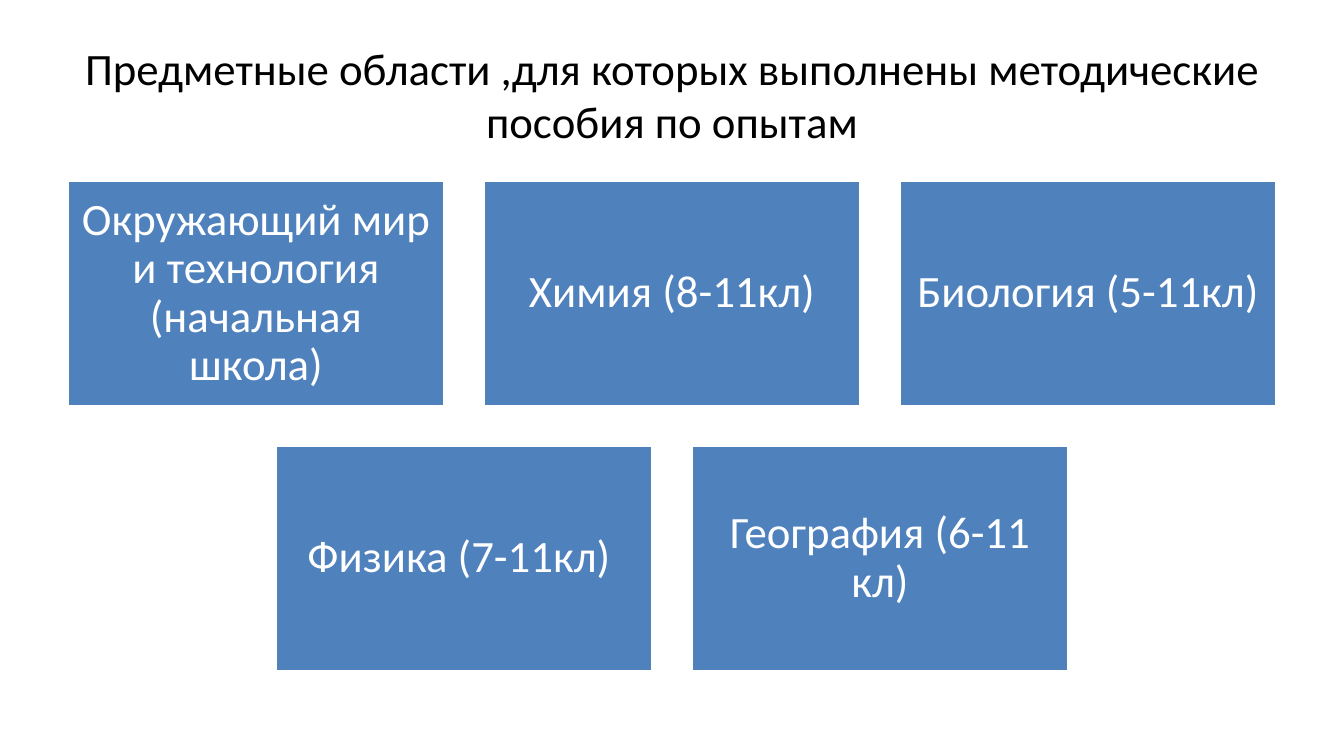
from dataclasses import dataclass

from pptx import Presentation
from pptx.dml.color import RGBColor as Rgb
from pptx.enum.shapes import MSO_SHAPE as Kind
from pptx.enum.text import MSO_ANCHOR as Anchor, PP_ALIGN as Align
from pptx.util import Pt

SCALE = 914400 / 134.4
WIDE, HIGH = 1344, 756
BOX_W, BOX_H, GAP = 378, 227, 38
TOP = 180
TITLE = "Предметные области ,для которых выполнены методические пособия по опытам"
ROWS = [
    [
        "Окружающий мир и технология (начальная школа)",
        "Химия (8-11кл)",
        "Биология (5-11кл)",
    ],
    ["Физика (7-11кл) ", "География (6-11 кл)"],
]


@dataclass(frozen=True)
class Theme:
    """Colours and type of the slide."""

    font: str = "Calibri"
    size: int = 24
    ink: str = "000000"
    paper: str = "FFFFFF"
    fill: str = "4F81BD"
    line: int = 2


THEME = Theme()


def px(*sizes):
    """Turn pixel lengths into EMU."""
    return [round(size * SCALE) for size in sizes]


def write(shape, text, color, pad_x, pad_y, lead):
    """Put centred text into a shape."""
    frame = shape.text_frame
    frame.word_wrap = True
    frame.vertical_anchor = Anchor.MIDDLE
    frame.margin_left = frame.margin_right = px(pad_x)[0]
    frame.margin_top = frame.margin_bottom = px(pad_y)[0]
    para = frame.paragraphs[0]
    para.alignment = Align.CENTER
    para.line_spacing = lead
    run = para.add_run()
    run.text = text
    run.font.name = THEME.font
    run.font.size = Pt(THEME.size)
    run.font.color.rgb = Rgb.from_string(color)


def add_title(slide, text):
    """Add the heading across the top."""
    box = slide.shapes.add_textbox(*px(67, 31, 1210, 126))
    write(box, text, THEME.ink, 13, 7, 1.0)


def add_box(slide, left, top, text):
    """Add one subject box."""
    box = slide.shapes.add_shape(Kind.RECTANGLE, *px(left, top, BOX_W, BOX_H))
    box.shadow.inherit = False
    box.fill.solid()
    box.fill.fore_color.rgb = Rgb.from_string(THEME.fill)
    box.line.color.rgb = Rgb.from_string(THEME.paper)
    box.line.width = Pt(THEME.line)
    write(box, text, THEME.paper, 13, 13, 0.9)


def add_row(slide, top, names):
    """Add a centred row of boxes."""
    step = BOX_W + GAP
    left = (WIDE - len(names) * step + GAP) // 2
    for col, name in enumerate(names):
        add_box(slide, left + col * step, top, name)


def main():
    """Build and save the slide."""
    deck = Presentation()
    deck.slide_width, deck.slide_height = px(WIDE, HIGH)
    slide = deck.slides.add_slide(deck.slide_layouts[6])
    add_title(slide, TITLE)
    for row, names in enumerate(ROWS):
        add_row(slide, TOP + row * (BOX_H + GAP), names)
    deck.save("out.pptx")


if __name__ == "__main__":
    main()
